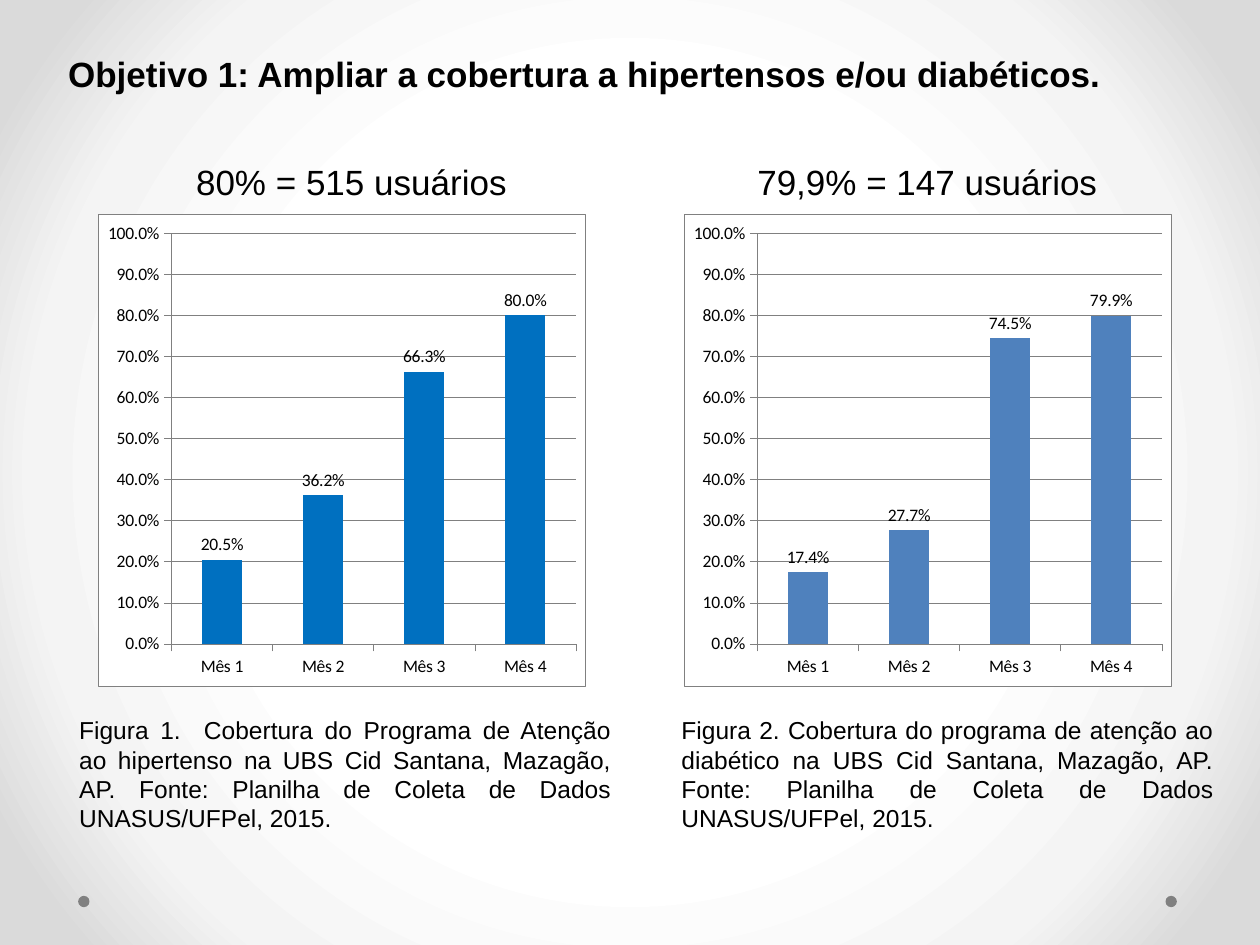
"""Build the coverage slide: a title and two captioned column charts."""
from dataclasses import dataclass

from pptx import Presentation, util as u
from pptx.chart.data import CategoryChartData
from pptx.dml.color import RGBColor
from pptx.enum import chart as ch, shapes, text
from pptx.oxml import parse_xml
from pptx.oxml.ns import nsdecls, qn


@dataclass(frozen=True)
class Theme:
    font: str = "Arial"
    chart_font: str = "Calibri"
    ink: str = "000000"
    paper: str = "FFFFFF"
    grey: str = "808080"
    heading: int = 20
    caption: int = 14
    chart: int = 10
    hairline: float = 0.25
    backdrop: tuple = ((50, "FFFFFF"), (76, "F4F4F4"), (92, "DADADA"))


@dataclass(frozen=True)
class Box:
    col: float
    row: float
    cols: float
    rows: float


@dataclass(frozen=True)
class Panel:
    heading: str
    heading_col: float
    caption: str
    caption_col: float
    chart_col: float
    values: tuple
    color: str


T = Theme()
COLS, ROWS = 100, 75
WIDTH, HEIGHT = u.Inches(10), u.Inches(7.5)
MONTHS = [f"Mês {n}" for n in range(1, 5)]
SOURCE = "Fonte: Planilha de Coleta de Dados UNASUS/UFPel, 2015."
PANELS = (
    Panel("80% = 515 usuários", 5.8,
          "Figura 1.  Cobertura do Programa de Atenção ao hipertenso na UBS "
          f"Cid Santana, Mazagão, AP. {SOURCE}",
          5.3, 7.8, (0.205, 0.362, 0.663, 0.8), "0070C0"),
    Panel("79,9% = 147 usuários", 51.5,
          "Figura 2. Cobertura do programa de atenção ao diabético na UBS "
          f"Cid Santana, Mazagão, AP. {SOURCE}",
          53.1, 54.3, (0.174, 0.277, 0.745, 0.799), "4F81BD"),
)


def rgb(color: str) -> RGBColor:
    return RGBColor.from_string(color)


def place(box: Box) -> tuple:
    """Turn grid columns and rows into slide lengths."""
    return (int(WIDTH * box.col / COLS), int(HEIGHT * box.row / ROWS),
            int(WIDTH * box.cols / COLS), int(HEIGHT * box.rows / ROWS))


def paint_backdrop(s) -> None:
    """Give the slide a radial grey gradient."""
    fill = s.background.fill
    fill.gradient()
    stops = "".join(f'<a:gs pos="{pos * 1000}"><a:srgbClr val="{color}"/></a:gs>'
                    for pos, color in T.backdrop)
    grad = s.background._cSld.find(".//" + qn("a:gradFill"))
    grad.getparent().replace(grad, parse_xml(
        f'<a:gradFill {nsdecls("a")} rotWithShape="1"><a:gsLst>{stops}</a:gsLst>'
        '<a:path path="circle"><a:fillToRect l="50000" t="50000" r="50000" '
        'b="50000"/></a:path></a:gradFill>'))


def write(sp, wording: str, size: int, align, anchor, bold: bool = False) -> None:
    """Fill a shape with one formatted run."""
    tf = sp.text_frame
    tf.word_wrap = True
    tf.auto_size = text.MSO_AUTO_SIZE.NONE
    tf.vertical_anchor = anchor
    p = tf.paragraphs[0]
    p.alignment = align
    r = p.add_run()
    r.text = wording
    r.font.name, r.font.size, r.font.bold = T.font, u.Pt(size), bold
    r.font.color.rgb = rgb(T.ink)


def add_title(s, wording: str, box: Box) -> None:
    """Move and format the title placeholder."""
    sp = s.shapes.title
    sp.left, sp.top, sp.width, sp.height = place(box)
    write(sp, wording, T.heading, text.PP_ALIGN.LEFT, text.MSO_ANCHOR.TOP, True)


def add_text(s, wording: str, box: Box, size: int, align) -> None:
    """Add a bottom-anchored text box."""
    write(s.shapes.add_textbox(*place(box)), wording, size, align,
          text.MSO_ANCHOR.BOTTOM)


def add_dot(s, box: Box) -> None:
    """Add a small grey dot."""
    sp = s.shapes.add_shape(shapes.MSO_SHAPE.OVAL, *place(box))
    sp.shadow.inherit = False
    sp.fill.solid()
    sp.fill.fore_color.rgb = rgb(T.grey)
    sp.line.fill.background()


def style_line(line) -> None:
    line.color.rgb = rgb(T.grey)
    line.width = u.Pt(T.hairline)


def frame_chart(chart) -> None:
    """Fill the chart and plot areas, draw the border and set the plot layout."""
    fill = f'<a:solidFill><a:srgbClr val="{T.paper}"/></a:solidFill>'
    border = (f'<a:ln w="{u.Pt(T.hairline)}"><a:solidFill><a:srgbClr val="{T.grey}"/>'
              '</a:solidFill></a:ln>')
    space = chart._chartSpace
    space.find(qn("c:txPr")).addprevious(parse_xml(
        f'<c:spPr {nsdecls("c", "a")}>{fill}{border}</c:spPr>'))
    plot_area = space.find(".//" + qn("c:plotArea"))
    plot_area.append(parse_xml(f'<c:spPr {nsdecls("c", "a")}>{fill}</c:spPr>'))
    for old in plot_area.findall(qn("c:layout")):
        plot_area.remove(old)
    shares = "".join(f'<c:{tag} val="{val}"/>' for tag, val in
                     (("x", 0.15), ("y", 0.04), ("w", 0.83), ("h", 0.87)))
    plot_area.insert(0, parse_xml(
        f'<c:layout {nsdecls("c")}><c:manualLayout><c:layoutTarget val="inner"/>'
        f'<c:xMode val="edge"/><c:yMode val="edge"/>{shares}'
        '</c:manualLayout></c:layout>'))


def add_chart(s, panel: Panel, box: Box) -> None:
    """Add a clustered column chart of monthly coverage."""
    data = CategoryChartData(number_format="0.0%")
    data.categories = MONTHS
    data.add_series("Series 1", panel.values)
    chart = s.shapes.add_chart(ch.XL_CHART_TYPE.COLUMN_CLUSTERED,
                               *place(box), data).chart
    chart.has_legend = chart.has_title = False
    chart.font.name, chart.font.size = T.chart_font, u.Pt(T.chart)
    chart.font.color.rgb = rgb(T.ink)
    for axis in (chart.category_axis, chart.value_axis):
        axis.major_tick_mark = ch.XL_TICK_MARK.OUTSIDE
        style_line(axis.format.line)
    axis = chart.value_axis
    axis.minimum_scale, axis.maximum_scale, axis.major_unit = 0, 1, 0.1
    style_line(axis.major_gridlines.format.line)
    plot = chart.plots[0]
    plot.gap_width, plot.vary_by_categories = 150, False
    plot.has_data_labels = True
    labels = plot.data_labels
    labels.show_value = True
    labels.position = ch.XL_LABEL_POSITION.OUTSIDE_END
    for item in (axis.tick_labels, labels):
        item.number_format, item.number_format_is_linked = "0.0%", False
    fill = plot.series[0].format.fill
    fill.solid()
    fill.fore_color.rgb = rgb(panel.color)
    frame_chart(chart)


def main() -> None:
    prs = Presentation()
    prs.slide_width, prs.slide_height = WIDTH, HEIGHT
    s = prs.slides.add_slide(prs.slide_layouts[5])
    paint_backdrop(s)
    for col in (6.2, 92.5):
        add_dot(s, Box(col, 71.1, 0.9, 0.9))
    add_title(s, "Objetivo 1: Ampliar a cobertura a hipertensos e/ou diabéticos.",
              Box(4.4, 3.7, 92.9, 4.4))
    for panel in PANELS:
        add_text(s, panel.heading, Box(panel.heading_col, 12.3, 44.2, 4.3),
                 T.heading, text.PP_ALIGN.CENTER)
        add_text(s, panel.caption, Box(panel.caption_col, 55.6, 44.2, 11),
                 T.caption, text.PP_ALIGN.JUSTIFY)
        add_chart(s, panel, Box(panel.chart_col, 17, 38.7, 37.5))
    prs.save("out.pptx")


if __name__ == "__main__":
    main()
